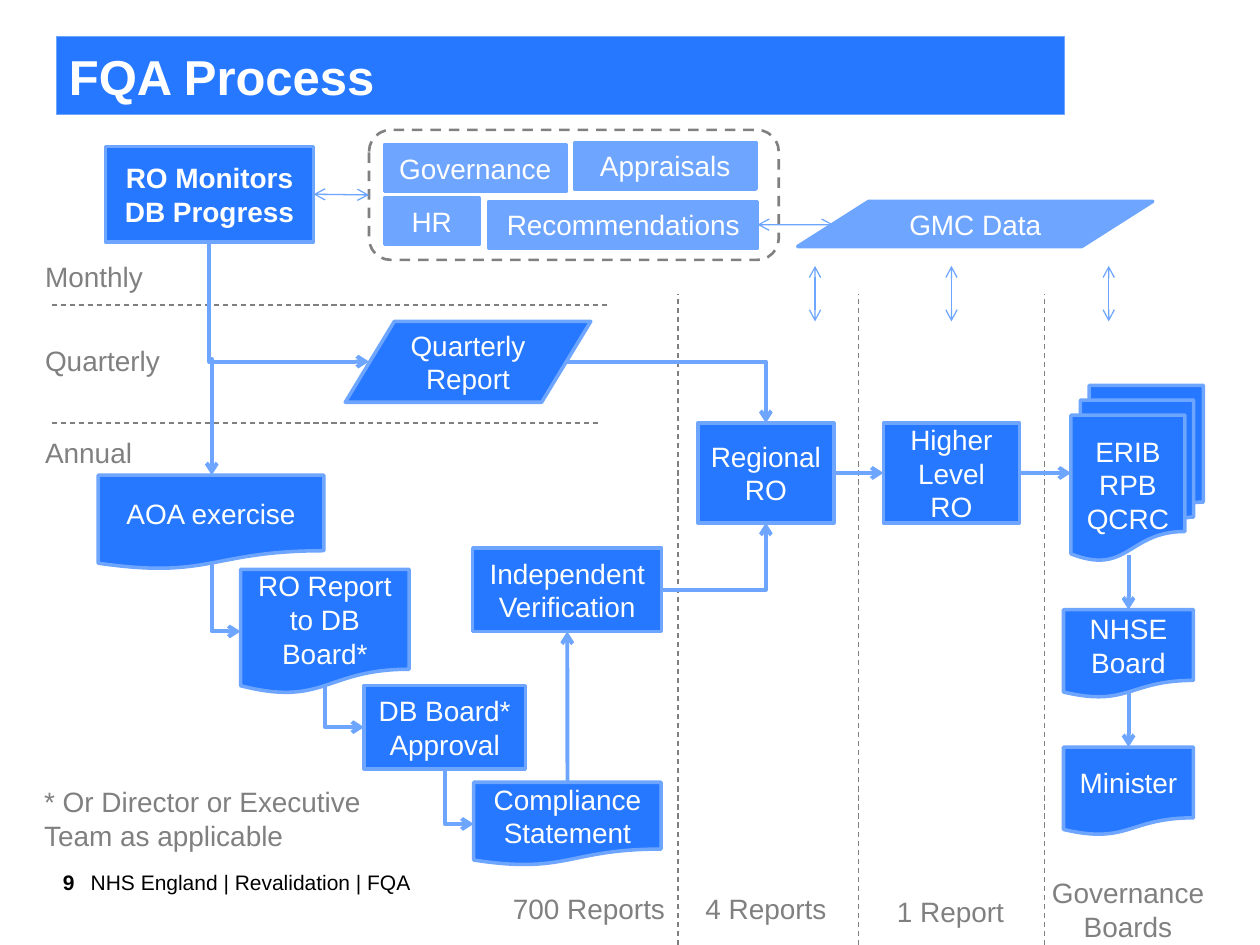
"""Build the FQA process flow slide."""
from lxml.etree import SubElement
from pptx import Presentation
from pptx.dml.color import RGBColor
from pptx.enum.dml import MSO_LINE
from pptx.enum.shapes import MSO_CONNECTOR, MSO_SHAPE
from pptx.enum.text import MSO_ANCHOR, PP_ALIGN
from pptx.oxml.ns import qn
from pptx.util import Cm, Pt

COLOURS = {"main": "2578FF", "light": "6EA5FF", "grey": "808080",
           "white": "FFFFFF", "black": "000000"}
RGB = {name: RGBColor.from_string(value) for name, value in COLOURS.items()}
LEFT, CENTER, RIGHT = PP_ALIGN.LEFT, PP_ALIGN.CENTER, PP_ALIGN.RIGHT
PROCESS = MSO_SHAPE.FLOWCHART_PROCESS
DOCUMENT = MSO_SHAPE.FLOWCHART_DOCUMENT
DATA = MSO_SHAPE.FLOWCHART_DATA

prs = Presentation()
prs.slide_width, prs.slide_height = Cm(25.4), Cm(19.05)
s = prs.slides.add_slide(prs.slide_layouts[6])


def write(sp, text, size, colour, align, anchor, bold=False):
    tf = sp.text_frame
    tf.word_wrap = True
    tf.vertical_anchor = anchor
    for i, line in enumerate(text.split("\n")):
        p = tf.paragraphs[0] if i == 0 else tf.add_paragraph()
        p.alignment = align
        r = p.add_run()
        r.text = line
        r.font.name = "Arial"
        r.font.size = Pt(size)
        r.font.bold = bold
        r.font.color.rgb = RGB[colour]


def connect(kind, x1, y1, x2, y2, colour, width, ends=(), dash=False):
    c = s.shapes.add_connector(kind, Cm(x1), Cm(y1), Cm(x2), Cm(y2))
    c.line.color.rgb = RGB[colour]
    c.line.width = Pt(width)
    if dash:
        c.line.dash_style = MSO_LINE.DASH
    spPr = c._element.spPr
    for end in ends:
        SubElement(spPr.find(qn("a:ln")), qn(f"a:{end}End")).set("type", "arrow")
    SubElement(spPr, qn("a:effectLst"))
    return c


boxes = [
    ("FQA Process", MSO_SHAPE.RECTANGLE, 1.14, 0.74, 20.32, 1.57, "main"),
    ("RO Report to DB Board*", DOCUMENT, 4.85, 11.48, 3.4, 2.51, "main"),
    ("RO Monitors DB Progress", PROCESS, 2.13, 2.95, 4.19, 1.93, "main"),
    ("ERIB\nRPB\nQCRC", MSO_SHAPE.FLOWCHART_MULTIDOCUMENT, 21.59, 7.77, 2.67, 3.53, "main"),
    ("HR", PROCESS, 7.75, 3.99, 1.91, 0.94, "light"),
    ("Governance", PROCESS, 7.75, 2.92, 3.66, 0.94, "light"),
    ("Recommendations", PROCESS, 9.86, 4.06, 5.41, 0.94, "light"),
    ("Appraisals", PROCESS, 11.58, 2.87, 3.66, 0.94, "light"),
    ("GMC Data", DATA, 16.08, 4.06, 7.16, 0.91, "light"),
    ("Quarterly Report", DATA, 6.96, 6.48, 4.95, 1.63, "main"),
    ("Regional RO", PROCESS, 14.07, 8.53, 2.74, 2.01, "main"),
    ("Higher Level RO", PROCESS, 17.81, 8.53, 2.74, 2.01, "main"),
    ("Compliance Statement", DOCUMENT, 9.55, 15.77, 3.78, 1.68, "main"),
    ("AOA exercise", DOCUMENT, 1.98, 9.58, 4.55, 1.9, "main"),
    ("DB Board* Approval", PROCESS, 7.34, 13.82, 3.25, 1.68, "main"),
    ("NHSE Board", DOCUMENT, 21.44, 12.29, 2.62, 1.78, "main"),
    ("Minister", DOCUMENT, 21.44, 15.06, 2.62, 1.78, "main"),
    ("Independent Verification", PROCESS, 9.53, 11.05, 3.81, 1.68, "main"),
]
nodes = {}
for text, preset, x, y, w, h, fill in boxes:
    sp = s.shapes.add_shape(preset, Cm(x), Cm(y), Cm(w), Cm(h))
    sp.shadow.inherit = False
    sp.fill.solid()
    sp.fill.fore_color.rgb = RGB[fill]
    sp.line.color.rgb = RGB["light"]
    title = text == "FQA Process"
    sp.line.width = Pt(0.75 if title else 2)
    write(sp, text, 28 if title else 16, "white", LEFT if title else CENTER,
          MSO_ANCHOR.MIDDLE, title or text.startswith("RO Monitors"))
    nodes[text] = sp

group = s.shapes.add_shape(MSO_SHAPE.ROUNDED_RECTANGLE, Cm(7.44), Cm(2.62), Cm(8.26), Cm(2.62))
group.shadow.inherit = False
group.fill.background()
group.line.color.rgb = RGB["grey"]
group.line.width = Pt(1.5)
group.line.dash_style = MSO_LINE.DASH
nodes["Sources"] = group

labels = [
    ("Monthly", 0.91, 5.23, 3.12, 0.69, LEFT),
    ("Quarterly", 0.91, 6.93, 3.12, 0.69, LEFT),
    ("Annual", 0.91, 8.79, 3.12, 0.69, LEFT),
    ("700 Reports", 10.34, 17.98, 3.12, 0.69, LEFT),
    ("4 Reports", 14.07, 17.98, 2.74, 0.69, CENTER),
    ("1 Report", 17.6, 18.03, 3.12, 0.69, CENTER),
    ("Governance Boards", 21.18, 17.65, 3.12, 1.37, CENTER),
    ("* Or Director or Executive Team as applicable", 0.89, 15.82, 6.68, 1.37, LEFT),
    ("NHS England | Revalidation | FQA", 1.83, 17.53, 20.12, 0.51, LEFT),
    ("9", 0.66, 17.53, 0.84, 0.51, RIGHT),
]
for text, x, y, w, h, align in labels:
    sp = s.shapes.add_textbox(Cm(x), Cm(y), Cm(w), Cm(h))
    tf = sp.text_frame
    tf.margin_left = tf.margin_right = tf.margin_top = tf.margin_bottom = 0
    footer = h == 0.51
    write(sp, text, 12 if footer else 16, "black" if footer else "grey", align,
          MSO_ANCHOR.BOTTOM if footer else MSO_ANCHOR.TOP, text == "9")

for x2, y in [(12.29, 6.15), (12.09, 8.53)]:
    connect(MSO_CONNECTOR.STRAIGHT, 1.04, y, x2, y, "grey", 0.75, dash=True)
for x in (13.67, 17.3, 21.06):
    connect(MSO_CONNECTOR.STRAIGHT, x, 19.05, x, 5.92, "grey", 0.75, dash=True)

for x1, y1, x2, y2, preset in [
    (4.22, 4.9, 7.44, 7.29, "bentConnector2"),
    (4.22, 4.9, 4.27, 9.58, "bentConnector3"),
    (4.27, 11.35, 4.85, 12.73, "bentConnector2"),
    (6.55, 13.82, 7.34, 14.66, "bentConnector2"),
    (8.97, 15.49, 9.55, 16.61, "bentConnector2"),
]:
    cx, cy, dx, dy = (x1 + x2) / 2, (y1 + y2) / 2, (x2 - x1) / 2, (y2 - y1) / 2
    c = connect(MSO_CONNECTOR.ELBOW, cx + dy, cy - dx, cx - dy, cy + dx, "light", 2.25, ["tail"])
    c._element.spPr.xfrm.set("rot", str(270 * 60000))
    c._element.spPr.prstGeom.set("prst", preset)

for x1, y1, x2, y2 in [(11.4, 7.29, 15.44, 8.53), (13.34, 11.89, 15.44, 10.54)]:
    c = connect(MSO_CONNECTOR.ELBOW, x1, y1, x2, y2, "light", 2.25, ["tail"])
    c._element.spPr.prstGeom.set("prst", "bentConnector2")

for start, i, end, j in [
    ("Regional RO", 3, "Higher Level RO", 1),
    ("Higher Level RO", 3, "ERIB\nRPB\nQCRC", 1),
    ("Compliance Statement", 0, "Independent Verification", 2),
    ("RO Monitors DB Progress", 3, "Sources", 1),
]:
    both = end == "Sources"
    c = connect(MSO_CONNECTOR.STRAIGHT, 0, 0, 1, 1, "light", 0.75 if both else 2.25,
                ["head", "tail"] if both else ["tail"])
    c.begin_connect(nodes[start], i)
    c.end_connect(nodes[end], j)

for y1, y2, end in [(11.18, 12.29, "NHSE Board"), (13.97, 15.06, "Minister")]:
    c = connect(MSO_CONNECTOR.STRAIGHT, 22.75, y1, 22.75, y2, "light", 2.25, ["tail"])
    c.end_connect(nodes[end], 0)

c = connect(MSO_CONNECTOR.STRAIGHT, 15.27, 4.53, 16.8, 4.53, "light", 0.75, ["head", "tail"])
c.begin_connect(nodes["Recommendations"], 3)
for x in (16.43, 19.18, 22.35):
    connect(MSO_CONNECTOR.STRAIGHT, x, 6.48, x, 5.36, "light", 0.75, ["head", "tail"])

prs.save("out.pptx")
